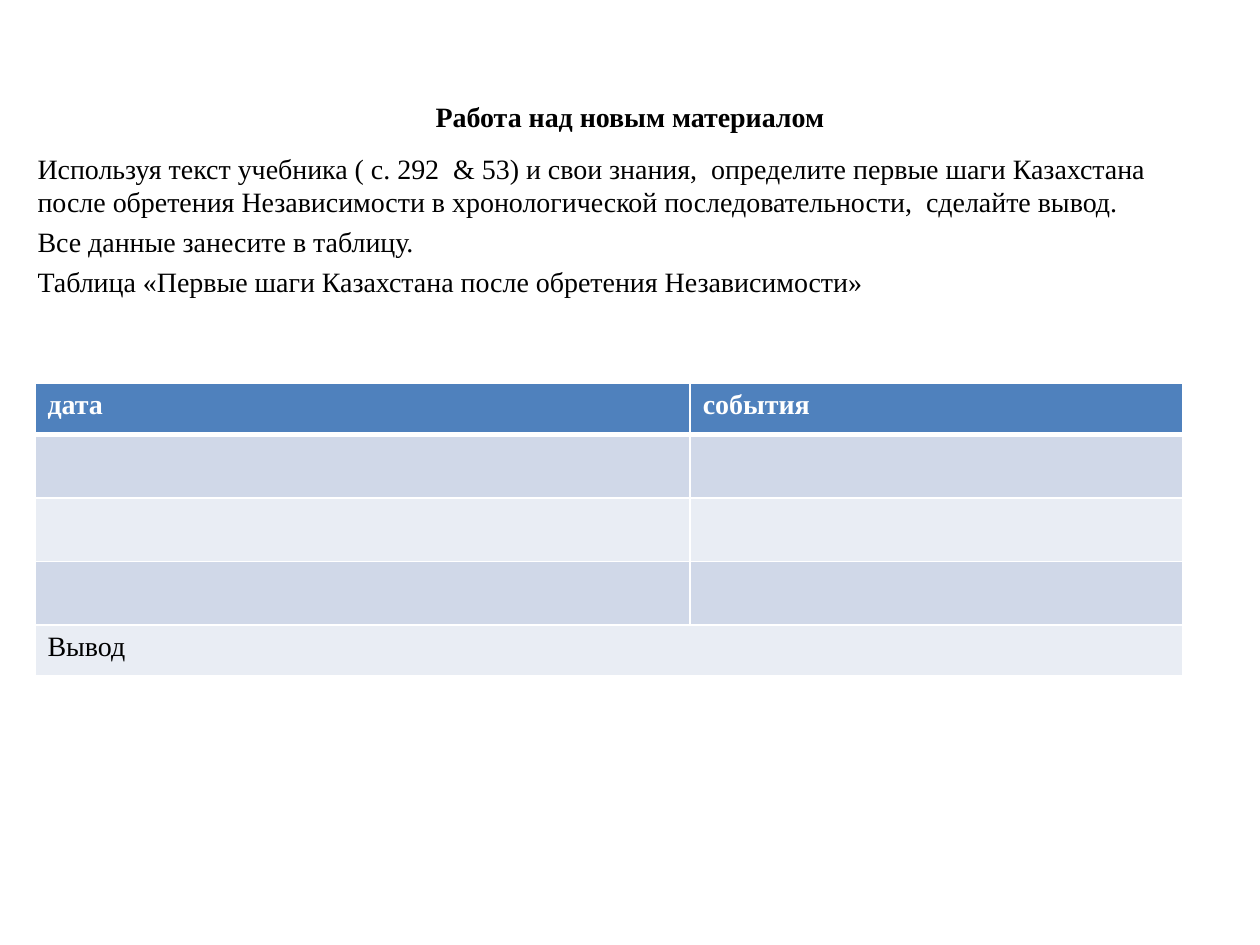
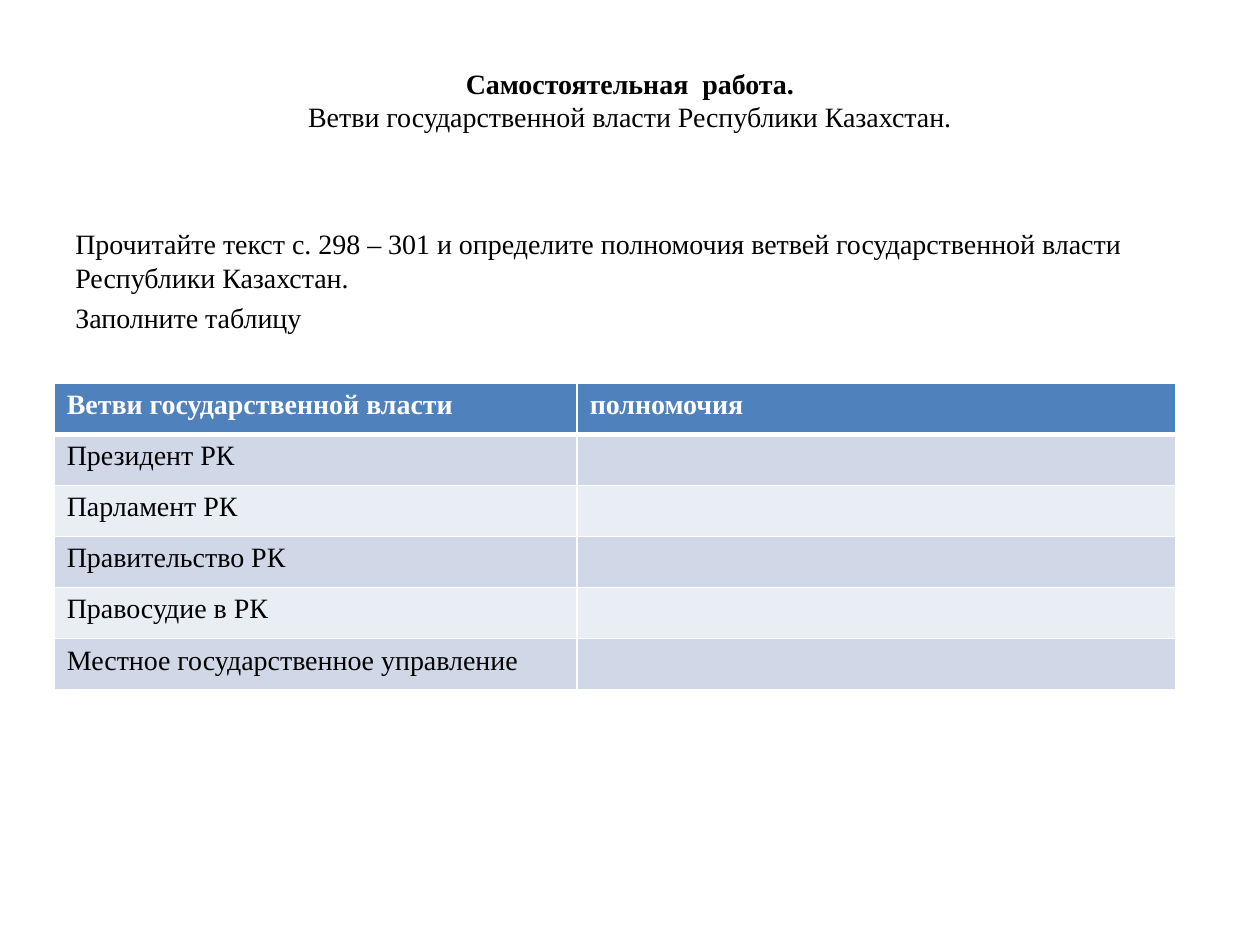
from dataclasses import dataclass

from lxml.etree import SubElement
from pptx import Presentation
from pptx.dml.color import RGBColor
from pptx.enum.text import MSO_ANCHOR, PP_ALIGN
from pptx.oxml.ns import qn
from pptx.util import Pt

COLORS = {
    "text": "000000",
    "white": "FFFFFF",
    "header": "4F81BD",
    "odd_row": "D0D8E8",
    "even_row": "E9EDF4",
}
FONT = "Times New Roman"
TEXT_SIZE = 16
PARAGRAPH_GAP = 3.6
INSET = 3.6
TITLE_ONLY = 5
TABLE_TOP = 219


@dataclass(frozen=True)
class Box:
    left: float
    top: float
    width: float
    height: float

    def lengths(self) -> tuple:
        return Pt(self.left), Pt(self.top), Pt(self.width), Pt(self.height)


@dataclass(frozen=True)
class Worksheet:
    left: float
    column_widths: tuple[float, ...]
    row_heights: tuple[float, ...]
    rows: tuple[tuple[str, ...], ...]


@dataclass(frozen=True)
class Lesson:
    title: tuple[str, ...]
    title_lift: float
    instructions: tuple[str, ...]
    instructions_box: Box
    worksheet: Worksheet


TITLE_BOX = Box(36, 21.6, 648, 90)

LESSONS = (
    Lesson(
        title=("Работа над новым материалом",),
        title_lift=0,
        instructions=(
            "Используя текст учебника ( с. 292  & 53) и свои знания,  определите первые шаги "
            "Казахстана после обретения Независимости в хронологической последовательности,  "
            "сделайте вывод.",
            "Все данные занесите в таблицу.",
            "Таблица «Первые шаги Казахстана после обретения Независимости»",
        ),
        instructions_box=Box(14.4, 82.8, 669.6, 399.6),
        worksheet=Worksheet(
            left=20,
            column_widths=(374.4, 281.2),
            row_heights=(29.2, 36.3, 36.3, 36.3, 29.2),
            rows=(("дата", "события"), ("", ""), ("", ""), ("", ""), ("Вывод",)),
        ),
    ),
    Lesson(
        title=("Самостоятельная  работа.", "Ветви государственной власти Республики Казахстан."),
        title_lift=9.5,
        instructions=(
            "Прочитайте текст с. 298 – 301 и определите полномочия ветвей государственной "
            "власти Республики Казахстан.",
            "Заполните таблицу",
        ),
        instructions_box=Box(36, 126, 648, 356.4),
        worksheet=Worksheet(
            left=31,
            column_widths=(298.8, 342),
            row_heights=(29.2,) * 6,
            rows=(
                ("Ветви государственной власти", "полномочия"),
                ("Президент РК", ""),
                ("Парламент РК", ""),
                ("Правительство РК", ""),
                ("Правосудие в РК", ""),
                ("Местное государственное управление", ""),
            ),
        ),
    ),
)


def color(name: str) -> RGBColor:
    return RGBColor.from_string(COLORS[name])


def format_paragraph(para, color_name: str = "text", bold: bool = False) -> None:
    for span in para.runs:
        span.font.name = FONT
        span.font.size = Pt(TEXT_SIZE)
        span.font.bold = bold
        span.font.color.rgb = color(color_name)


def add_title(page, lesson: Lesson) -> None:
    title = page.shapes.title
    title.left, title.top, title.width, title.height = TITLE_BOX.lengths()
    frame = title.text_frame
    frame.vertical_anchor = MSO_ANCHOR.MIDDLE
    frame.margin_bottom = Pt(INSET + 2 * lesson.title_lift)
    frame.text = "\n".join(lesson.title)
    for index, para in enumerate(frame.paragraphs):
        para.alignment = PP_ALIGN.CENTER
        format_paragraph(para, bold=index == 0)


def add_instructions(page, lesson: Lesson) -> None:
    frame = page.shapes.add_textbox(*lesson.instructions_box.lengths()).text_frame
    frame.word_wrap = True
    frame.text = "\n".join(lesson.instructions)
    for index, para in enumerate(frame.paragraphs):
        para.space_before = Pt(PARAGRAPH_GAP if index else 0)
        format_paragraph(para)


def add_borders(cell, top: float, bottom: float) -> None:
    properties = cell._tc.get_or_add_tcPr()
    for side, width in (("L", 1), ("R", 1), ("T", top), ("B", bottom)):
        line = SubElement(properties, qn(f"a:ln{side}"), w=str(Pt(width)))
        fill = SubElement(line, qn("a:solidFill"))
        SubElement(fill, qn("a:srgbClr"), val=COLORS["white"])


def row_fill(row_index: int) -> str:
    if row_index == 0:
        return "header"
    return "odd_row" if row_index % 2 else "even_row"


def add_worksheet(page, sheet: Worksheet) -> None:
    box = Box(sheet.left, TABLE_TOP, sum(sheet.column_widths), sum(sheet.row_heights))
    table = page.shapes.add_table(
        len(sheet.rows), len(sheet.column_widths), *box.lengths()
    ).table
    for column, width in zip(table.columns, sheet.column_widths):
        column.width = Pt(width)
    for row_index, (row, height, texts) in enumerate(
        zip(table.rows, sheet.row_heights, sheet.rows)
    ):
        row.height = Pt(height)
        is_header = row_index == 0
        for cell in row.cells:
            add_borders(cell, top=3 if row_index == 1 else 1, bottom=3 if is_header else 1)
            cell.fill.solid()
            cell.fill.fore_color.rgb = color(row_fill(row_index))
        for cell, text in zip(row.cells, texts):
            if text:
                cell.text_frame.text = text
                format_paragraph(
                    cell.text_frame.paragraphs[0], "white" if is_header else "text", is_header
                )
        if len(texts) < len(sheet.column_widths):
            last_column = len(sheet.column_widths) - 1
            table.cell(row_index, len(texts) - 1).merge(table.cell(row_index, last_column))


def main() -> None:
    deck = Presentation()
    deck.slide_width, deck.slide_height = Pt(720), Pt(540)
    for lesson in LESSONS:
        page = deck.slides.add_slide(deck.slide_layouts[TITLE_ONLY])
        add_title(page, lesson)
        add_instructions(page, lesson)
        add_worksheet(page, lesson.worksheet)
    deck.save("out.pptx")


if __name__ == "__main__":
    main()
